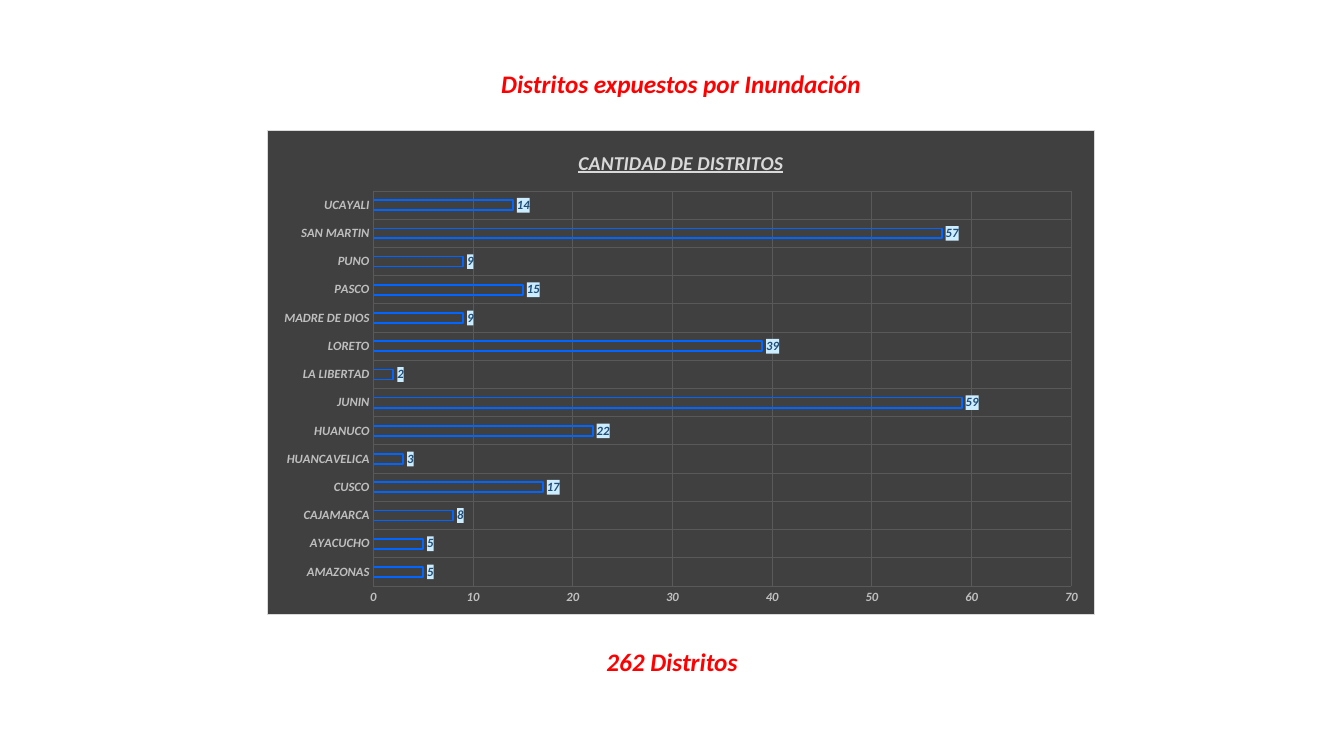
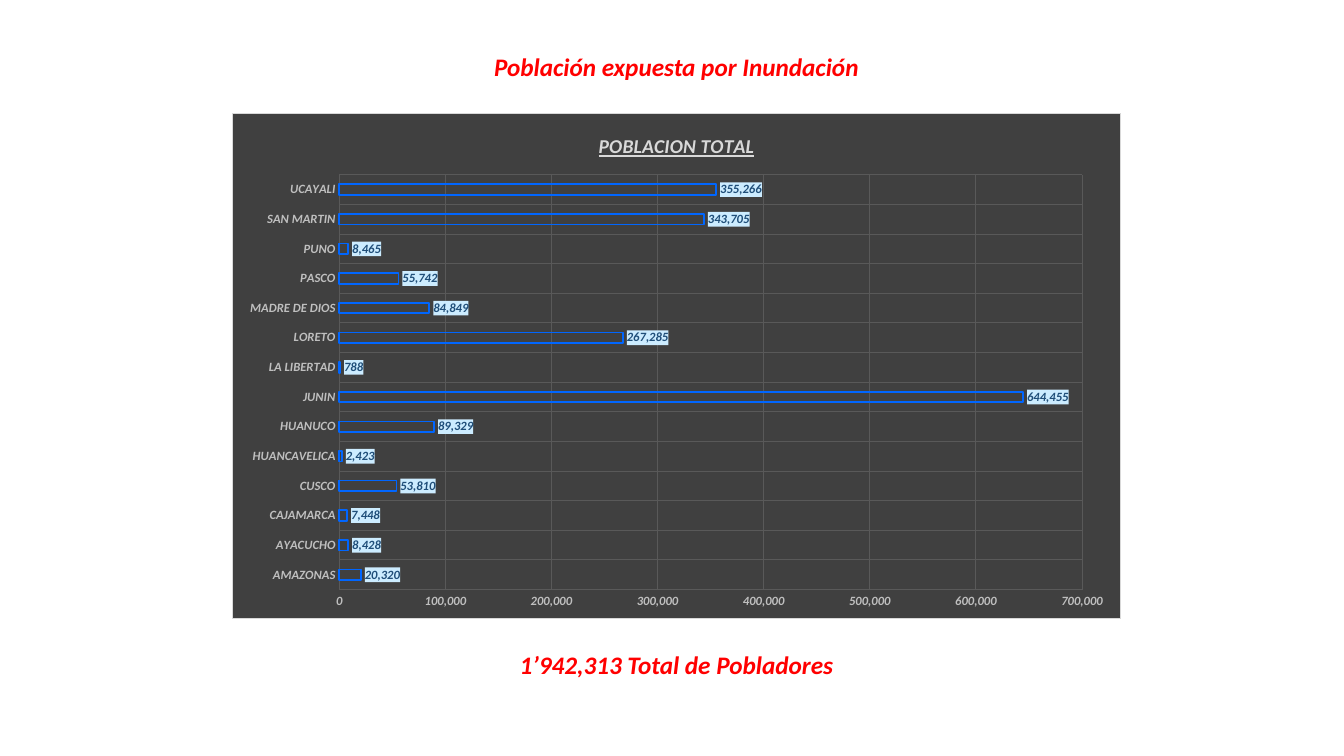
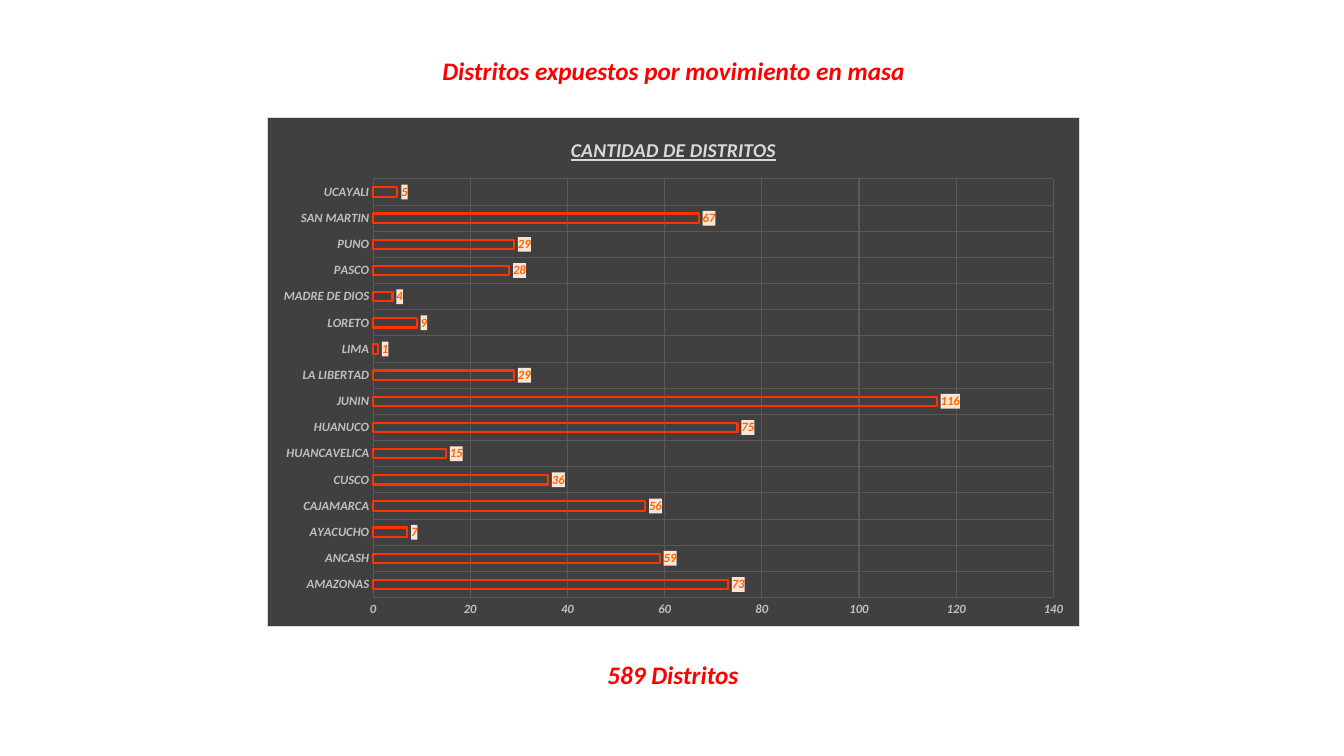
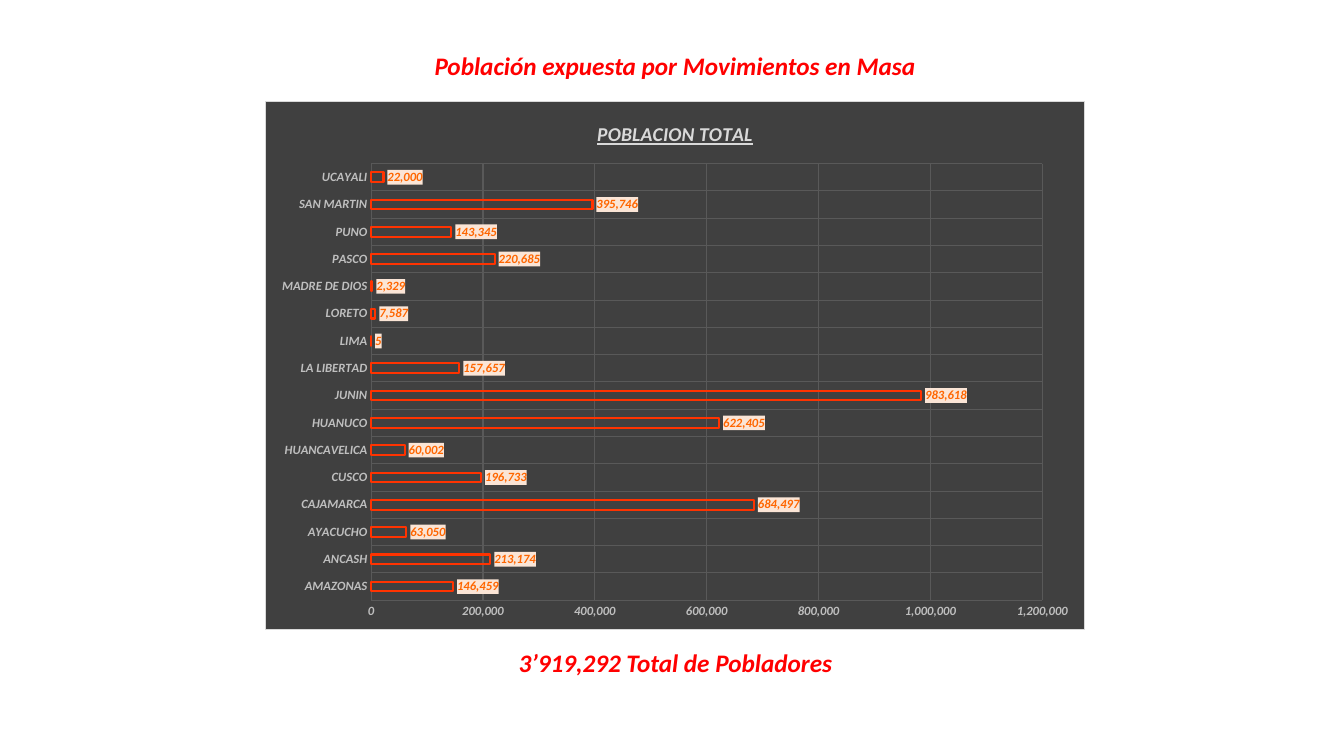
import pptx
import pptx.util
import pptx.chart.data
import pptx.dml.color
import pptx.enum.chart
import pptx.enum.text
import pptx.oxml
import pptx.oxml.ns

Inches, Pt = pptx.util.Inches, pptx.util.Pt
enum = pptx.enum.chart

# Shared style
FONT = "Calibri"
HEX = {
    "head": "FF0000", "panel": "404040", "edge": "D9D9D9", "grid": "595959",
    "axis": "BFBFBF", "base": "000000",
    "blue": "0066FF", "navy": "1F4E79", "sky": "CCECFF",
    "red": "FF3300", "orange": "FF6600", "peach": "FBE5D6",
}
BOLD = {"name": FONT, "bold": True, "italic": True}
HEAD = {**BOLD, "size": Pt(18)}
NAME = {**BOLD, "size": Pt(14), "underline": True}
TICK = {**BOLD, "size": Pt(9)}
FLOOD = {"line": "blue", "width": 1.25, "text": "navy", "back": "sky"}
SLIDE = {"line": "red", "width": 1.5, "text": "orange", "back": "peach"}

# Regions, from the bottom of the chart to the top
ZONES = ["AMAZONAS", "ANCASH", "AYACUCHO", "CAJAMARCA", "CUSCO", "HUANCAVELICA",
         "HUANUCO", "JUNIN", "LA LIBERTAD", "LIMA", "LORETO", "MADRE DE DIOS",
         "PASCO", "PUNO", "SAN MARTIN", "UCAYALI"]
WET = [zone for zone in ZONES if zone not in ("ANCASH", "LIMA")]

# Boxes are left, top, width, height in inches; scale is maximum and step
PAGES = [
    {"head": "Distritos expuestos por Inundación", "head_box": (4.85, 0.63, 3.81, 0.4),
     "foot": "262 Distritos", "foot_box": (5.91, 6.36, 1.51, 0.4),
     "name": "CANTIDAD DE DISTRITOS", "box": (2.65, 1.29, 8.21, 4.81),
     "look": FLOOD, "zones": WET, "scale": (70, 10),
     "vals": [5, 5, 8, 17, 3, 22, 59, 2, 39, 9, 15, 9, 57, 14]},
    {"head": "Población expuesta por Inundación", "head_box": (4.78, 0.46, 3.86, 0.4),
     "foot": "1’942,313 Total de Pobladores", "foot_box": (5.03, 6.39, 3.36, 0.4),
     "name": "POBLACION TOTAL", "box": (2.3, 1.12, 8.82, 5.02),
     "look": FLOOD, "zones": WET, "scale": (700000, 100000),
     "vals": [20320, 8428, 7448, 53810, 2423, 89329, 644455, 788, 267285, 84849,
              55742, 8465, 343705, 355266]},
    {"head": "Distritos expuestos por movimiento en masa", "head_box": (4.26, 0.5, 4.84, 0.4),
     "foot": "589 Distritos", "foot_box": (5.84, 6.49, 1.67, 0.4),
     "name": "CANTIDAD DE DISTRITOS", "box": (2.65, 1.16, 8.06, 5.06),
     "look": SLIDE, "zones": ZONES, "scale": (140, 20),
     "vals": [73, 59, 7, 56, 36, 15, 75, 116, 29, 1, 9, 4, 28, 29, 67, 5]},
    {"head": "Población expuesta por Movimientos en Masa", "head_box": (4.18, 0.45, 5.03, 0.4),
     "foot": "3’919,292 Total de Pobladores", "foot_box": (5.03, 6.37, 3.34, 0.4),
     "name": "POBLACION TOTAL", "box": (2.63, 1, 8.13, 5.25),
     "look": SLIDE, "zones": ZONES, "scale": (1200000, 200000),
     "vals": [146459, 213174, 63050, 684497, 196733, 60002, 622405, 983618, 157657,
              5, 7587, 2329, 220685, 143345, 395746, 22000]},
]


def style(font, form, color):
    for key, value in form.items():
        setattr(font, key, value)
    font.color.rgb = pptx.dml.color.RGBColor.from_string(HEX[color])


def paint(owner, fill, line=None):
    """Put a fill and an outline ahead of the text properties of a chart part."""
    solid = '<a:solidFill><a:srgbClr val="%s"/></a:solidFill>'
    edge = solid % HEX[line] if line else "<a:noFill/>"
    owner.find(pptx.oxml.ns.qn("c:txPr")).addprevious(pptx.oxml.parse_xml(
        "<c:spPr %s>%s<a:ln w=\"9525\">%s</a:ln></c:spPr>"
        % (pptx.oxml.ns.nsdecls("c", "a"), solid % HEX[fill], edge)))


deck = pptx.Presentation()
deck.slide_width, deck.slide_height = Inches(13.33), Inches(7.5)

for page in PAGES:
    slide = deck.slides.add_slide(deck.slide_layouts[5])
    look = page["look"]

    # Heading and total
    title = slide.shapes.title
    title.left, title.top, title.width, title.height = map(Inches, page["head_box"])
    total = slide.shapes.add_textbox(*map(Inches, page["foot_box"]))
    for box, text, wrap in ((title, page["head"], False), (total, page["foot"], True)):
        frame = box.text_frame
        frame.text = text
        frame.word_wrap = wrap
        frame.auto_size = pptx.enum.text.MSO_AUTO_SIZE.SHAPE_TO_FIT_TEXT
        para = frame.paragraphs[0]
        para.alignment = pptx.enum.text.PP_ALIGN.CENTER
        style(para.runs[0].font, HEAD, "head")

    # Bar chart on a dark panel
    data = pptx.chart.data.CategoryChartData(number_format="#,##0")
    data.categories = page["zones"]
    data.add_series("Series 1", page["vals"])
    chart = slide.shapes.add_chart(enum.XL_CHART_TYPE.BAR_CLUSTERED,
                                   *map(Inches, page["box"]), data).chart
    style(chart.font, {"name": FONT, "size": Pt(10)}, "base")
    paint(chart._chartSpace, "panel", "edge")
    chart.has_legend = False
    chart.has_title = True
    chart.chart_title.include_in_layout = False
    chart.chart_title.text_frame.text = page["name"]
    style(chart.chart_title.text_frame.paragraphs[0].runs[0].font, NAME, "edge")

    # Axes and grid
    for axis in (chart.category_axis, chart.value_axis):
        axis.major_tick_mark = axis.minor_tick_mark = enum.XL_TICK_MARK.NONE
        axis.format.line.fill.background()
        axis.has_major_gridlines = True
        grid = axis.major_gridlines.format.line
        grid.width = Pt(0.75)
        grid.color.rgb = pptx.dml.color.RGBColor.from_string(HEX["grid"])
        style(axis.tick_labels.font, TICK, "axis")
    axis.minimum_scale = 0
    axis.maximum_scale, axis.major_unit = page["scale"]
    axis.tick_labels.number_format = "#,##0"
    axis.tick_labels.number_format_is_linked = False

    # Hollow bars
    plot = chart.plots[0]
    plot.gap_width, plot.overlap, plot.vary_by_categories = 182, -50, False
    bars = plot.series[0]
    bars.invert_if_negative = False
    bars.format.fill.background()
    bars.format.line.width = Pt(look["width"])
    bars.format.line.color.rgb = pptx.dml.color.RGBColor.from_string(HEX[look["line"]])

    # Value labels
    tags = bars.data_labels
    tags.show_value = True
    tags.position = enum.XL_LABEL_POSITION.OUTSIDE_END
    tags.number_format = "#,##0"
    tags.number_format_is_linked = False
    style(tags.font, TICK, look["text"])
    paint(tags._element, look["back"])

deck.save("out.pptx")
